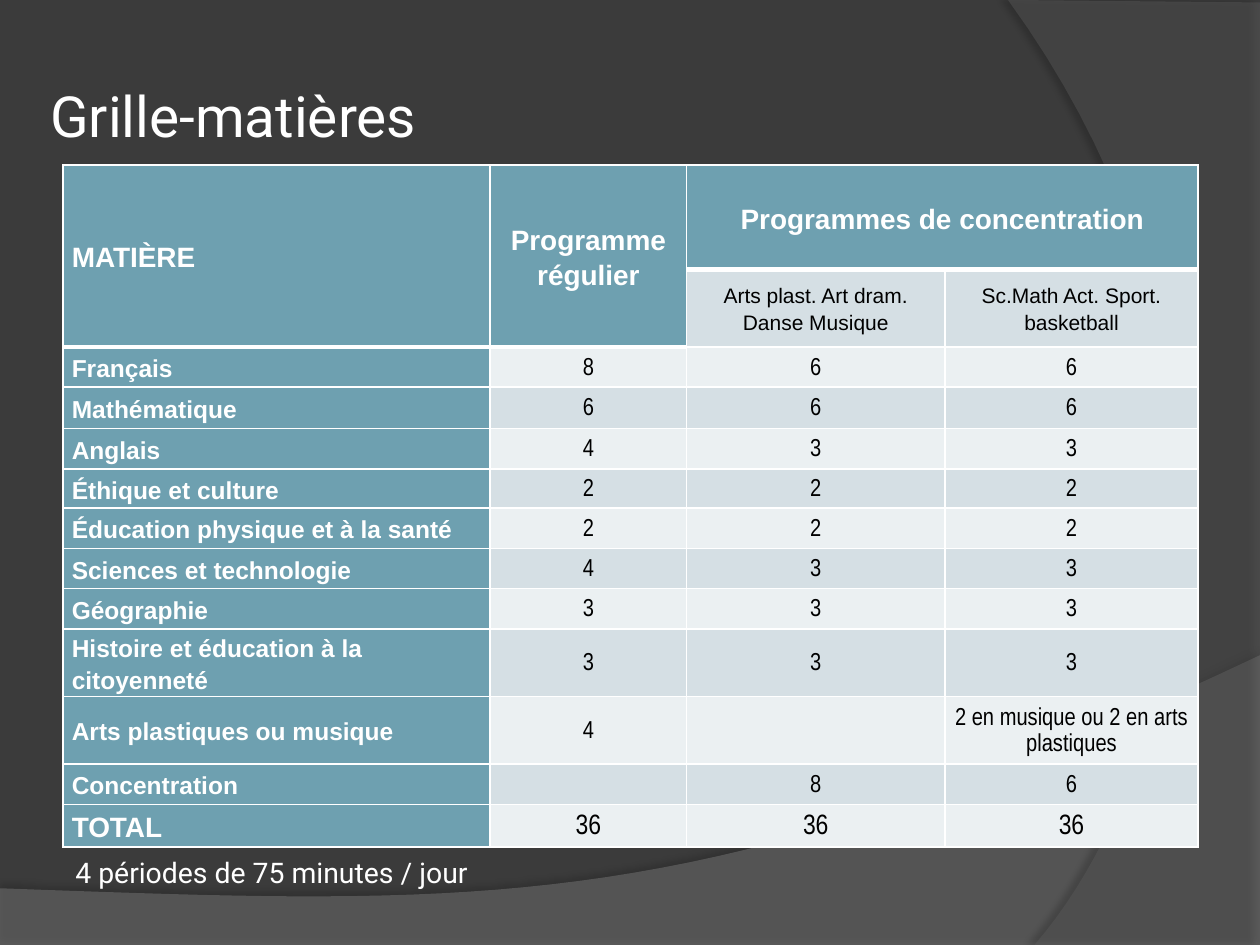
import lxml.etree
import pptx
import pptx.dml.color
import pptx.enum.text
import pptx.oxml.ns
import pptx.util

Inches = pptx.util.Inches
Pt = pptx.util.Pt
qn = pptx.oxml.ns.qn
ALIGN = pptx.enum.text.PP_ALIGN
ANCHOR = pptx.enum.text.MSO_ANCHOR
WHITE, BLACK, TEAL = "FFFFFF", "000000", "6EA0B0"
BANDS = ["EBF0F2", "D5DFE4"]
WIDTHS = [3.39, 1.56, 2.05, 2.01]
HEIGHTS = [0.83, 0.51, 0.32, 0.33, 0.32, 0.31, 0.32, 0.32, 0.32, 0.32, 0.33, 0.32, 0.34]
ROWS = [
    ["MATIÈRE", "Programme régulier", "Programmes de concentration", ""],
    ["", "", "Arts plast. Art dram.\nDanse Musique", "Sc.Math Act. Sport.\nbasketball"],
    ["Français", "8", "6", "6"],
    ["Mathématique", "6", "6", "6"],
    ["Anglais", "4", "3", "3"],
    ["Éthique et culture", "2", "2", "2"],
    ["Éducation physique et à la santé", "2", "2", "2"],
    ["Sciences et technologie", "4", "3", "3"],
    ["Géographie", "3", "3", "3"],
    ["Histoire et éducation à la citoyenneté", "3", "3", "3"],
    ["Arts plastiques ou musique", "4", "", "2 en musique ou 2 en arts plastiques"],
    ["Concentration", "", "8", "6"],
    ["TOTAL", "36", "36", "36"],
]


def color(value):
    return pptx.dml.color.RGBColor.from_string(value)


def paint(fill, value):
    fill.solid()
    fill.fore_color.rgb = color(value)


def node(parent, tag, **attrs):
    item = lxml.etree.SubElement(parent, qn(tag))
    for name, value in attrs.items():
        item.set(name, str(value))
    return item


def style(frame, size, font, tint, bold=False):
    for para in frame.paragraphs:
        for run in para.runs:
            run.font.size = Pt(size)
            run.font.name = font
            run.font.bold = bold
            run.font.color.rgb = color(tint)


def label(slide, box, text, size, anchor, inset):
    frame = slide.shapes.add_textbox(*map(Inches, box)).text_frame
    frame.word_wrap = True
    frame.vertical_anchor = anchor
    frame.margin_left = frame.margin_right = Inches(inset)
    frame.text = text
    style(frame, size, "Roboto", WHITE)
    return frame


def curve(start, first, second, end, steps=40):
    points = []
    for step in range(1, steps + 1):
        t = step / steps
        u = 1 - t
        parts = zip(start, first, second, end)
        points.append(tuple(
            u**3 * a + 3 * u * u * t * b + 3 * u * t * t * c + t**3 * d
            for a, b, c, d in parts))
    return points


def swoosh(slide, points, tint, alpha, shade, gap, angle):
    spots = [(Inches(x), Inches(y)) for x, y in points]
    maker = slide.shapes.build_freeform(*spots[0])
    maker.add_line_segments(spots[1:], close=True)
    shape = maker.convert_to_shape()
    paint(shape.fill, tint)
    shape.line.fill.background()
    props = shape.fill._xPr
    node(props.find(".//" + qn("a:srgbClr")), "a:alpha", val=alpha * 1000)
    effects = node(props, "a:effectLst")
    shadow = node(effects, "a:outerShdw", blurRad=Pt(4), dist=Pt(gap),
                  dir=angle * 60000, algn="ctr", rotWithShape=0)
    tone = node(shadow, "a:srgbClr", val=BLACK)
    node(tone, "a:alpha", val=shade * 1000)


def border(cell, heavy):
    props = cell._tc.get_or_add_tcPr()
    for place, side in enumerate(["L", "R", "T", "B"]):
        width = 3 if heavy and side == "B" else 1
        line = node(props, "a:ln" + side, w=Pt(width))
        node(node(line, "a:solidFill"), "a:srgbClr", val=WHITE)
        props.remove(line)
        props.insert(place, line)


def dress(cell, text, row, col):
    head = row == 0 or col == 0 or (row == 1 and col == 1)
    cell.text = text
    cell.vertical_anchor = ANCHOR.MIDDLE
    cell.margin_left = cell.margin_right = Inches(0.07)
    cell.margin_top = cell.margin_bottom = 0
    for para in cell.text_frame.paragraphs:
        para.line_spacing = 1.15
        para.alignment = ALIGN.CENTER if col else ALIGN.LEFT
    size = 16 if row in (0, len(ROWS) - 1) else 12 if row == 1 else 14
    font = "Arial" if head or row == 1 else "Arial Narrow"
    style(cell.text_frame, size, font, WHITE if head else BLACK, head)
    paint(cell.fill, TEAL if head else BANDS[row % 2])
    border(cell, row == 0 or (row == 1 and col < 2))


def grid(slide):
    frame = slide.shapes.add_table(
        len(ROWS), len(WIDTHS), Inches(0.5), Inches(1.31),
        Inches(sum(WIDTHS)), Inches(sum(HEIGHTS)))
    table = frame.table
    table.first_row = table.horz_banding = False
    for col, width in zip(table.columns, WIDTHS):
        col.width = Inches(width)
    for row, height in zip(table.rows, HEIGHTS):
        row.height = Inches(height)
    for row, texts in enumerate(ROWS):
        for col, text in enumerate(texts):
            dress(table.cell(row, col), text, row, col)
    for col in range(2):
        table.cell(0, col).merge(table.cell(1, col))
    table.cell(0, 2).merge(table.cell(0, 3))


def main():
    deck = pptx.Presentation()
    deck.slide_width, deck.slide_height = Inches(10), Inches(7.5)
    slide = deck.slides.add_slide(deck.slide_layouts[6])
    paint(slide.background.fill, "3B3B3B")
    wave = [(0, 7.05), (0, 7.51), (10, 7.51), (10, 5.2)]
    wave += curve((10, 5.2), (5.59, 7.29), (3.91, 7.19), (0, 7.05))
    swoosh(slide, wave, "7F7F7F", 45, 35, 3.5, 270)
    side = [(10, 0.02), (10, 7.5), (8.21, 7.5)]
    side += curve((8.21, 7.5), (9.35, 6.19), (10.18, 3), (8, 0))
    swoosh(slide, side, "5E5E5E", 40, 45, 4, 180)
    label(slide, (0.35, 0.5, 8.4, 0.82), "Grille-matières", 32.4, ANCHOR.MIDDLE, 0.05)
    grid(slide)
    note = label(slide, (0.5, 6.48, 8.4, 0.63), "4 périodes de 75 minutes / jour",
                 16.2, ANCHOR.BOTTOM, 0.1)
    note.paragraphs[0].space_before = Pt(4)
    deck.save("out.pptx")


if __name__ == "__main__":
    main()
